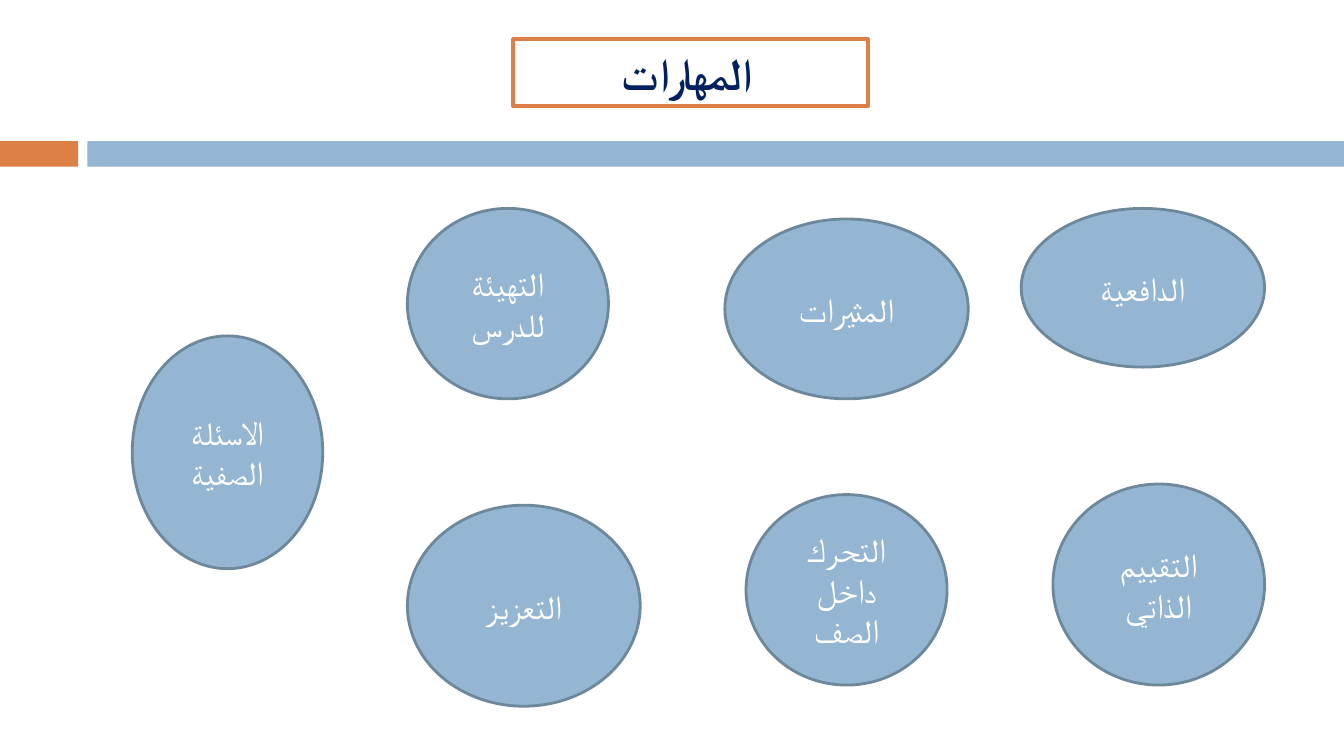
"""Build the slide of teaching skills."""
from dataclasses import dataclass

from pptx import Presentation
from pptx.dml.color import RGBColor
from pptx.enum.shapes import MSO_SHAPE
from pptx.enum.text import MSO_ANCHOR, MSO_AUTO_SIZE, PP_ALIGN
from pptx.util import Cm, Pt

OVAL, RECT = MSO_SHAPE.OVAL, MSO_SHAPE.RECTANGLE
MIDDLE = MSO_ANCHOR.MIDDLE
NO_FIT = MSO_AUTO_SIZE.NONE
CENTER, JUSTIFY = PP_ALIGN.CENTER, PP_ALIGN.JUSTIFY


@dataclass(frozen=True)
class Theme:
    blue: str = "94B6D2"
    edge: str = "6D879B"
    orange: str = "DD8047"
    navy: str = "002060"
    white: str = "FFFFFF"
    head_font: str = "Calibri"
    body_font: str = "Cabin"
    head_size: int = 24
    body_size: int = 18


@dataclass(frozen=True)
class Box:
    left: float
    top: float
    width: float
    height: float


@dataclass(frozen=True)
class Skill:
    text: str
    box: Box


THEME = Theme()
WIDTH, HEIGHT = 25.4, 14.29
BAR_TOP, BAR_HIGH, BAR_LEFT = 2.67, 0.48, 1.65
HEAD = Box(9.7, 0.74, 6.7, 1.27)
SKILLS = [
    Skill("الدافعية", Box(19.3, 3.94, 4.6, 3)),
    Skill("التحرك داخل الصف", Box(14.1, 9.35, 3.8, 3.6)),
    Skill("التعزيز", Box(7.7, 9.55, 4.4, 3.8)),
    Skill("المثيرات", Box(13.7, 4.14, 4.6, 3.4)),
    Skill("التهيئة للدرس", Box(7.7, 3.94, 3.8, 3.6)),
    Skill("الاسئلة الصفية", Box(2.5, 6.35, 3.6, 4.4)),
    Skill("التقييم الذاتي", Box(19.9, 9.15, 4, 3.8)),
]


def color(code: str) -> RGBColor:
    return RGBColor.from_string(code)


def paint(shape, fill: str, edge: str = "", weight: float = 0) -> None:
    shape.fill.solid()
    shape.fill.fore_color.rgb = color(fill)
    if edge:
        shape.line.color.rgb = color(edge)
        shape.line.width = Pt(weight)
    else:
        shape.line.fill.background()


def write(shape, text: str, align: PP_ALIGN, face: str, size: int,
          ink: str, bold: bool = False) -> None:
    frame = shape.text_frame
    frame.text = text
    frame.word_wrap = True
    frame.auto_size = NO_FIT
    frame.vertical_anchor = MIDDLE
    para = frame.paragraphs[0]
    para.alignment = align
    para._p.get_or_add_pPr().set("rtl", "1")
    font = para.font
    font.name, font.size, font.bold = face, Pt(size), bold
    font.color.rgb = color(ink)


def add_shape(slide, kind: MSO_SHAPE, box: Box):
    shape = slide.shapes.add_shape(
        kind, Cm(box.left), Cm(box.top), Cm(box.width), Cm(box.height))
    shape.shadow.inherit = False
    return shape


def add_bar(slide, left: float, width: float, fill: str) -> None:
    paint(add_shape(slide, RECT, Box(left, BAR_TOP, width, BAR_HIGH)), fill)


def add_skill(slide, skill: Skill) -> None:
    shape = add_shape(slide, OVAL, skill.box)
    paint(shape, THEME.blue, THEME.edge, 1.5)
    write(shape, skill.text, CENTER, THEME.body_font, THEME.body_size, THEME.white)


def set_title(slide, text: str) -> None:
    title = slide.shapes.title
    title.left, title.top = Cm(HEAD.left), Cm(HEAD.top)
    title.width, title.height = Cm(HEAD.width), Cm(HEAD.height)
    paint(title, THEME.white, THEME.orange, 2)
    write(title, text, JUSTIFY, THEME.head_font, THEME.head_size, THEME.navy, True)
    title.text_frame.margin_right = Cm(2.18)


def main() -> None:
    deck = Presentation()
    deck.slide_width, deck.slide_height = Cm(WIDTH), Cm(HEIGHT)
    slide = deck.slides.add_slide(deck.slide_layouts[5])
    add_bar(slide, 0, 1.48, THEME.orange)
    add_bar(slide, BAR_LEFT, WIDTH - BAR_LEFT, THEME.blue)
    set_title(slide, "المهارات")
    for skill in SKILLS:
        add_skill(slide, skill)
    deck.save("out.pptx")


if __name__ == "__main__":
    main()
